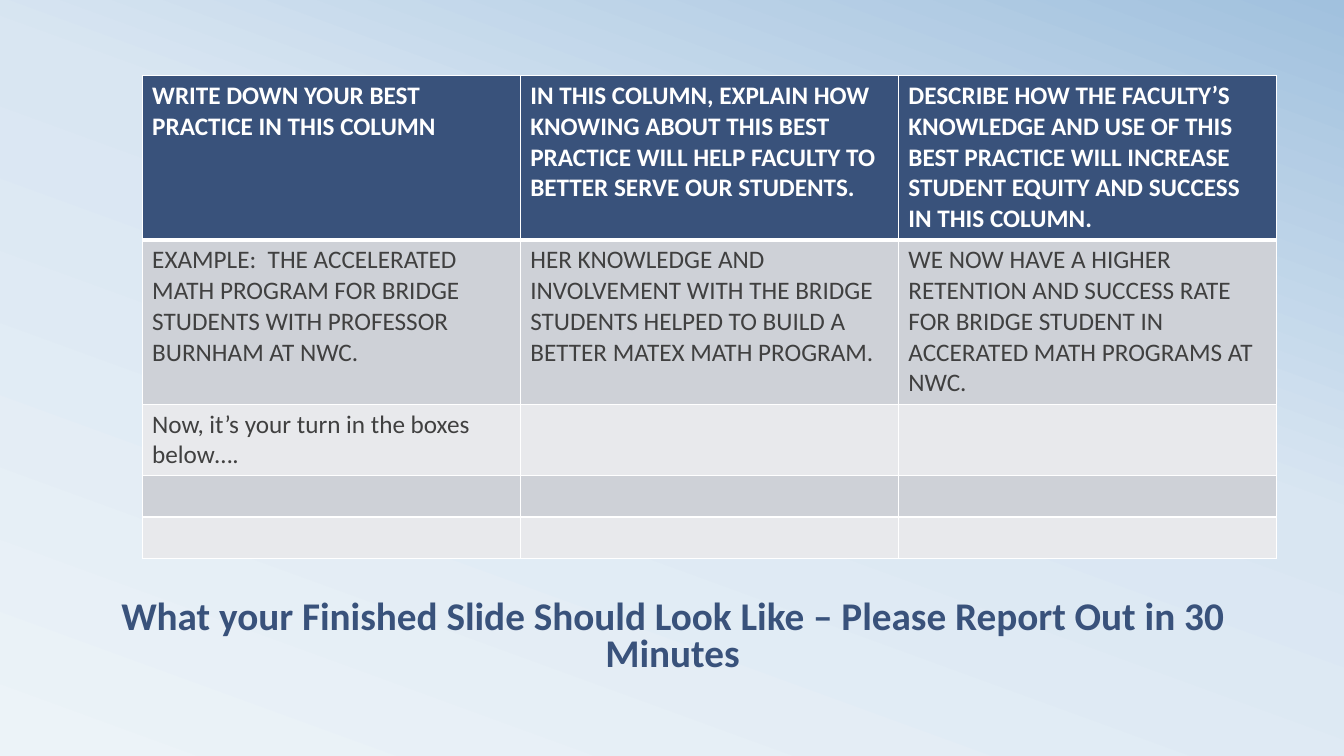
from copy import deepcopy

from lxml.etree import SubElement
from pptx import Presentation
from pptx.dml.color import RGBColor
from pptx.enum.text import MSO_ANCHOR, PP_ALIGN
from pptx.oxml.ns import qn
from pptx.util import Inches, Pt

HUES = {
    "navy": "39527B", "white": "FFFFFF", "text": "404040",
    "dark": "CED1D7", "light": "E8E9EC",
    "pale": "ECF3F8", "mist": "D9E6F2", "sky": "A1C1DE",
}
ROWS = [
    ["WRITE DOWN YOUR BEST PRACTICE IN THIS COLUMN",
     "IN THIS COLUMN, EXPLAIN HOW KNOWING ABOUT THIS BEST PRACTICE WILL HELP "
     "FACULTY TO BETTER SERVE OUR STUDENTS.",
     "DESCRIBE HOW THE FACULTY’S KNOWLEDGE AND USE OF THIS BEST PRACTICE WILL "
     "INCREASE STUDENT EQUITY AND SUCCESS IN THIS COLUMN."],
    ["EXAMPLE:  THE ACCELERATED MATH PROGRAM FOR BRIDGE STUDENTS WITH "
     "PROFESSOR BURNHAM AT NWC.",
     "HER KNOWLEDGE AND INVOLVEMENT WITH THE BRIDGE STUDENTS HELPED TO BUILD A "
     "BETTER MATEX MATH PROGRAM.",
     "WE NOW HAVE A HIGHER RETENTION AND SUCCESS RATE FOR BRIDGE STUDENT IN "
     "ACCERATED MATH PROGRAMS AT NWC."],
    ["Now, it’s your turn in the boxes below….", "", ""],
    ["", "", ""],
    ["", "", ""],
]
TALL = [1.63, 1.63, 0.71, 0.41, 0.41]


def rgb(name):
    """Return the named colour."""
    return RGBColor.from_string(HUES[name])


def add_run(para, text, size, hue, bold=False):
    """Add one styled run to a paragraph."""
    run = para.add_run()
    run.text = text
    font = run.font
    font.name, font.size, font.bold = "Calibri", Pt(size), bold
    font.color.rgb = rgb(hue)


def set_back(slide):
    """Fill the background with a three-stop gradient."""
    fill = slide.background.fill
    fill.gradient()
    fill.gradient_angle = 70
    stops = next(slide.element.iter(qn("a:gsLst")))
    stops.insert(1, deepcopy(stops[0]))
    for stop, (place, hue) in zip(
            fill.gradient_stops, [(0, "pale"), (0.58, "mist"), (1, "sky")]):
        stop.position = place
        stop.color.rgb = rgb(hue)


def set_edge(cell, side, width):
    """Draw one white cell border ahead of the cell's fill."""
    props = cell._tc.get_or_add_tcPr()
    line = SubElement(props, qn(f"a:{side}"), w=str(Pt(width)))
    fill = SubElement(line, qn("a:solidFill"))
    SubElement(fill, qn("a:srgbClr"), val=HUES["white"])


def fill_cell(cell, text, row):
    """Style one cell by its row and write its text."""
    head = row == 0
    for side in ("lnL", "lnR", "lnT", "lnB"):
        thick = (head and side == "lnB") or (row == 1 and side == "lnT")
        set_edge(cell, side, 3 if thick else 1)
    cell.fill.solid()
    cell.fill.fore_color.rgb = rgb(
        "navy" if head else "dark" if row % 2 else "light")
    para = cell.text_frame.paragraphs[0]
    para.font.size = Pt(18)
    if text:
        add_run(para, text, 18, "white" if head else "text", head)


def add_grid(slide):
    """Add the best practice table."""
    grid = slide.shapes.add_table(
        len(ROWS), 3, Inches(1.41), Inches(0.75),
        Inches(11.25), Inches(sum(TALL))).table
    for col in grid.columns:
        col.width = Inches(3.75)
    for row, texts in enumerate(ROWS):
        grid.rows[row].height = Inches(TALL[row])
        for col, text in enumerate(texts):
            fill_cell(grid.cell(row, col), text, row)


def add_title(slide, text):
    """Add the centred title below the table."""
    frame = slide.shapes.add_textbox(
        Inches(0.67), Inches(5.58), Inches(12), Inches(1.17)).text_frame
    frame.word_wrap = True
    frame.vertical_anchor = MSO_ANCHOR.BOTTOM
    para = frame.paragraphs[0]
    para.alignment = PP_ALIGN.CENTER
    para.line_spacing = 0.8
    add_run(para, text, 28, "navy", True)


def main():
    """Build and save the slide."""
    deck = Presentation()
    deck.slide_width, deck.slide_height = Inches(13.33), Inches(7.5)
    slide = deck.slides.add_slide(deck.slide_layouts[6])
    set_back(slide)
    add_title(slide, "What your Finished Slide Should Look Like – "
                     "Please Report Out in 30 Minutes")
    add_grid(slide)
    deck.save("out.pptx")


if __name__ == "__main__":
    main()
